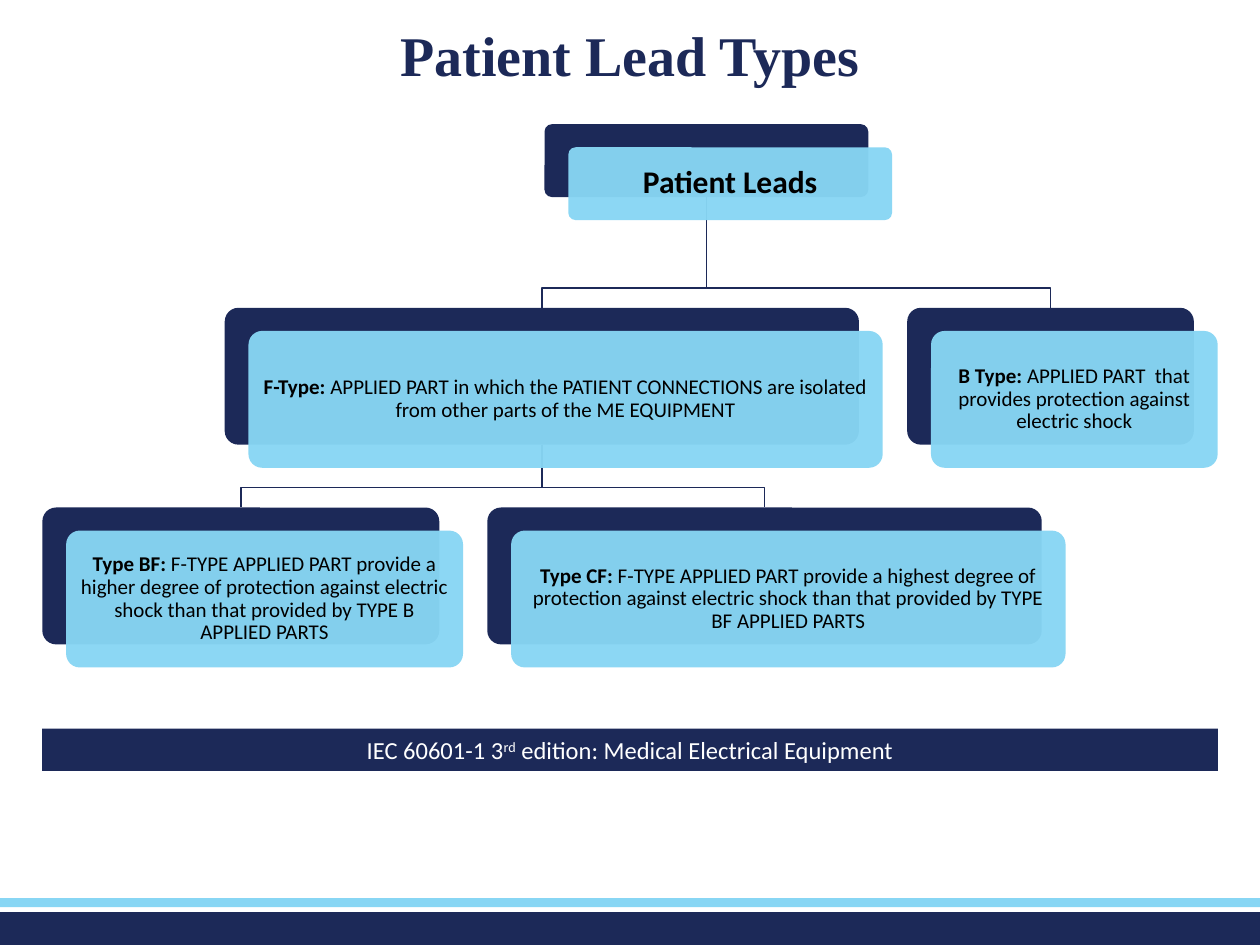
from dataclasses import dataclass

from lxml.etree import SubElement
from pptx import Presentation
from pptx.dml.color import RGBColor
from pptx.enum.shapes import MSO_SHAPE
from pptx.enum.text import MSO_ANCHOR, MSO_AUTO_SIZE, PP_ALIGN
from pptx.oxml.ns import qn
from pptx.shapes.autoshape import Shape
from pptx.slide import Slide
from pptx.text.text import TextFrame
from pptx.util import Pt


@dataclass(frozen=True)
class Theme:
    navy: RGBColor = RGBColor(0x1C, 0x29, 0x58)
    sky: RGBColor = RGBColor(0x88, 0xD6, 0xF4)
    black: RGBColor = RGBColor(0, 0, 0)
    white: RGBColor = RGBColor(255, 255, 255)
    title_font: str = "Times New Roman"
    body_font: str = "Calibri"
    title_size: float = 32
    root_size: float = 18
    standard_size: float = 14
    body_size: float = 12


@dataclass(frozen=True)
class Node:
    """A two-layer card; left and top belong to the back layer."""
    left: float
    top: float
    width: float
    height: float
    term: str
    definition: str = ""
    size: float = 12
    inset: float = 3.6

    @property
    def center(self) -> float:
        return self.left + self.width / 2


THEME = Theme()
SLIDE_WIDTH, SLIDE_HEIGHT = 720, 540
FRONT_DX, FRONT_DY = 13.6, 13.2  # front card offset
BUS_RISE = 11.3  # height of the horizontal branch above the child cards
ROW_TWO, ROW_THREE, CARD_HEIGHT = 175.9, 290, 78.2

ROOT = Node(311.2, 71, 185, 41.6, "Patient Leads", size=THEME.root_size, inset=5)
F_TYPE = Node(128.4, ROW_TWO, 362.4, CARD_HEIGHT, "F-Type: ",
              "APPLIED PART in which the PATIENT CONNECTIONS are isolated "
              "from other parts of the ME EQUIPMENT")
B_TYPE = Node(518.4, ROW_TWO, 163.8, CARD_HEIGHT, "B Type: ",
              "APPLIED PART  that provides protection against electric shock")
TYPE_BF = Node(24.2, ROW_THREE, 226.8, CARD_HEIGHT, "Type BF: ",
               "F-TYPE APPLIED PART provide a higher degree of protection against "
               "electric shock than that provided by TYPE B APPLIED PARTS")
TYPE_CF = Node(278.5, ROW_THREE, 316.8, CARD_HEIGHT, "Type CF: ",
               "F-TYPE APPLIED PART provide a highest degree of protection against "
               "electric shock than that provided by TYPE BF APPLIED PARTS")
NODES = [ROOT, F_TYPE, TYPE_BF, TYPE_CF, B_TYPE]
BRANCHES = [(ROOT, B_TYPE), (F_TYPE, TYPE_CF), (F_TYPE, TYPE_BF), (ROOT, F_TYPE)]


def add_block(slide: Slide, kind: MSO_SHAPE, left: float, top: float,
              width: float, height: float, color: RGBColor) -> Shape:
    shape = slide.shapes.add_shape(kind, Pt(left), Pt(top), Pt(width), Pt(height))
    shape.shadow.inherit = False
    shape.fill.solid()
    shape.fill.fore_color.rgb = color
    shape.line.fill.background()
    return shape


def format_text(frame: TextFrame, font_name: str, size: float, color: RGBColor) -> None:
    frame.word_wrap = True
    frame.vertical_anchor = MSO_ANCHOR.MIDDLE
    paragraph = frame.paragraphs[0]
    paragraph.alignment = PP_ALIGN.CENTER
    paragraph.font.name = font_name
    paragraph.font.size = Pt(size)
    paragraph.font.color.rgb = color


def add_branch(slide: Slide, parent: Node, child: Node) -> None:
    bus = child.top - BUS_RISE
    start = (Pt(parent.center), Pt(parent.top + parent.height))
    builder = slide.shapes.build_freeform(*start)
    builder.add_line_segments([(Pt(parent.center), Pt(bus)),
                               (Pt(child.center), Pt(bus)),
                               (Pt(child.center), Pt(child.top))], close=False)
    shape = builder.convert_to_shape()
    shape.shadow.inherit = False
    shape.fill.background()
    shape.line.color.rgb = THEME.navy
    shape.line.width = Pt(1)


def add_node(slide: Slide, node: Node) -> None:
    back = add_block(slide, MSO_SHAPE.ROUNDED_RECTANGLE, node.left, node.top,
                     node.width, node.height, THEME.navy)
    front = add_block(slide, MSO_SHAPE.ROUNDED_RECTANGLE, node.left + FRONT_DX,
                      node.top + FRONT_DY, node.width, node.height, THEME.sky)
    for card in (back, front):
        card.adjustments[0] = 0.1
    # Slight transparency lets the back card show through
    color = front.fill._xPr.find(qn("a:solidFill"))[0]
    SubElement(color, qn("a:alpha")).set("val", "96000")

    frame = front.text_frame
    frame.margin_left = frame.margin_right = Pt(node.inset)
    frame.margin_top = frame.margin_bottom = Pt(node.inset)
    format_text(frame, THEME.body_font, node.size, THEME.black)
    paragraph = frame.paragraphs[0]
    paragraph.line_spacing = 0.9
    term = paragraph.add_run()
    term.text = node.term
    term.font.bold = True
    if node.definition:
        paragraph.add_run().text = node.definition


def add_title(slide: Slide, text: str) -> None:
    title = slide.shapes.title
    title.left, title.top, title.width, title.height = Pt(60), Pt(13), Pt(600), Pt(41)
    title.text_frame.text = text
    title.text_frame.auto_size = MSO_AUTO_SIZE.NONE
    format_text(title.text_frame, THEME.title_font, THEME.title_size, THEME.navy)
    paragraph = title.text_frame.paragraphs[0]
    paragraph.line_spacing = 0.9
    paragraph.font.bold = True


def add_standard_bar(slide: Slide) -> None:
    bar = add_block(slide, MSO_SHAPE.RECTANGLE, 24, 416.4, 672, 24.2, THEME.navy)
    format_text(bar.text_frame, THEME.body_font, THEME.standard_size, THEME.white)
    paragraph = bar.text_frame.paragraphs[0]
    for text, baseline in (("IEC 60601-1 3", 0), ("rd", 30000),
                           (" edition: Medical Electrical Equipment", 0)):
        run = paragraph.add_run()
        run.text = text
        if baseline:
            run._r.get_or_add_rPr().set("baseline", str(baseline))


def main() -> None:
    presentation = Presentation()
    presentation.slide_width, presentation.slide_height = Pt(SLIDE_WIDTH), Pt(SLIDE_HEIGHT)
    slide = presentation.slides.add_slide(presentation.slide_layouts[5])

    # Footer bands
    add_block(slide, MSO_SHAPE.RECTANGLE, 0, 521.3, SLIDE_WIDTH, 18.7, THEME.navy)
    add_block(slide, MSO_SHAPE.RECTANGLE, 0, 513.2, SLIDE_WIDTH, 5.2, THEME.sky)

    # Title and cited standard
    add_title(slide, "Patient Lead Types")
    add_standard_bar(slide)

    # Hierarchy: branches lie behind the cards
    for parent, child in BRANCHES:
        add_branch(slide, parent, child)
    for node in NODES:
        add_node(slide, node)

    presentation.save("out.pptx")


if __name__ == "__main__":
    main()
